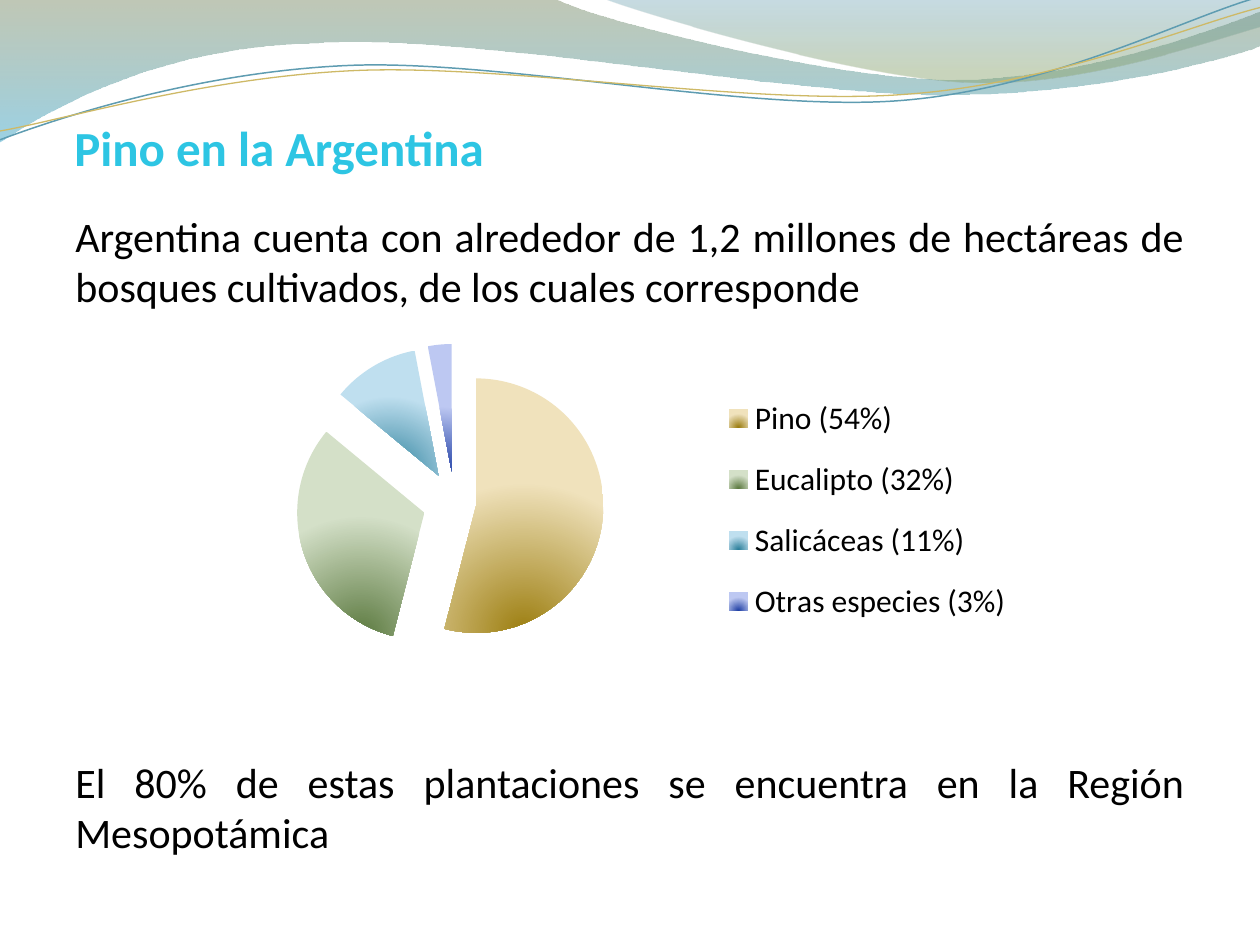
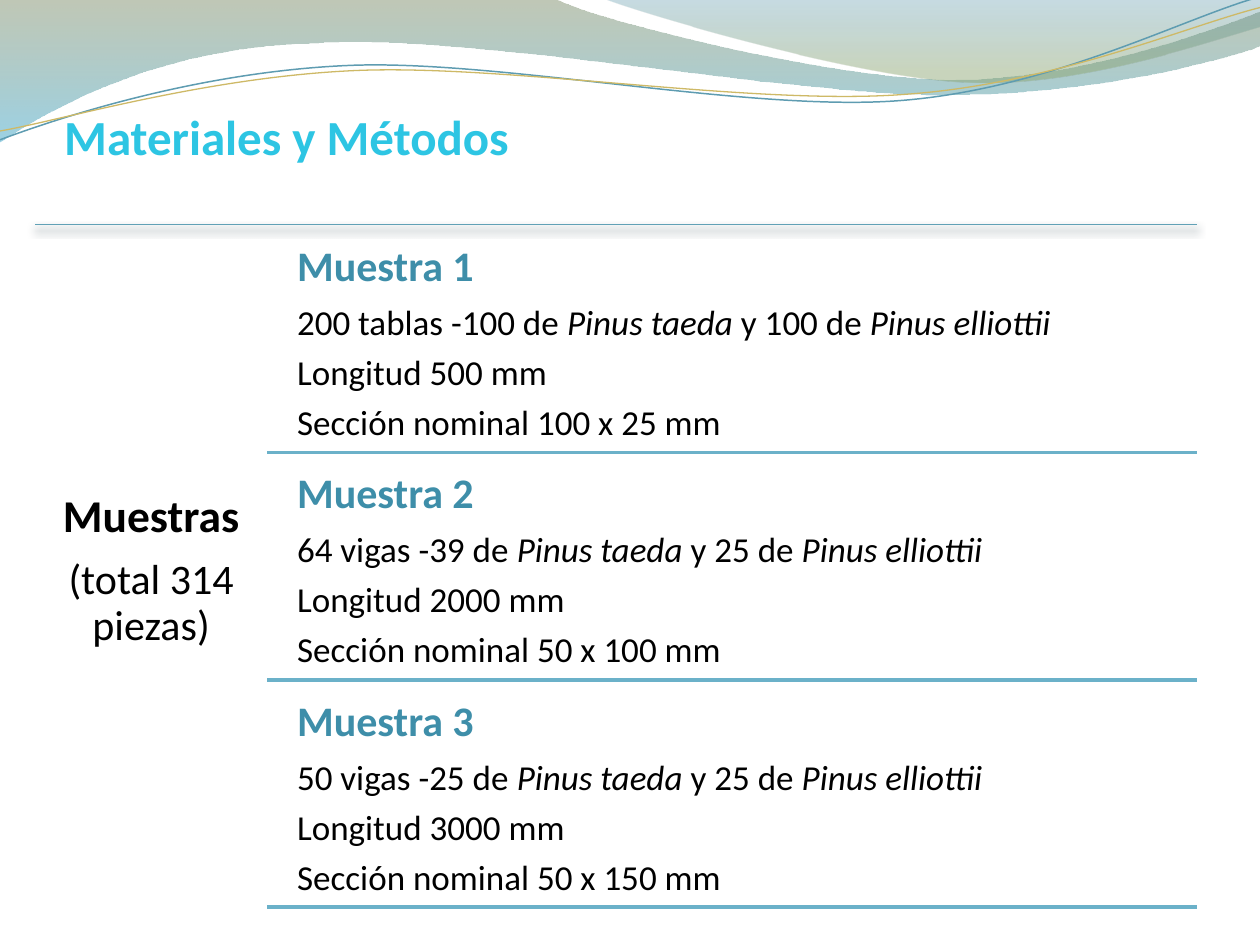
from dataclasses import dataclass
from pptx import Presentation
from pptx.chart.data import CategoryChartData
from pptx.dml.color import RGBColor
from pptx.enum.chart import XL_CHART_TYPE, XL_LEGEND_POSITION
from pptx.enum.shapes import MSO_CONNECTOR
from pptx.enum.text import MSO_ANCHOR, MSO_AUTO_SIZE, PP_ALIGN
from pptx.oxml import parse_xml
from pptx.oxml.ns import nsdecls, qn
from pptx.util import Inches, Pt


@dataclass(frozen=True)
class Theme:
    font: str = "Calibri"
    chart_font: str = "Cambria"
    title: str = "2DC5E3"
    heading: str = "3E8EA9"
    text: str = "000000"
    rule: str = "6BB1C9"
    top_rule: str = "61A1B6"
    shadow: str = "213941"
    title_size: int = 28
    group_size: int = 26
    body_size: int = 24
    detail_size: int = 20
    legend_size: int = 18


T = Theme()

BANDS = [
    {"start": (0, 0),
     "segments": [(4.4, -0.01), (4.76, 0.17, 6.64, 0.63, 7.58, 0.63), (8.53, 0.63, 9.58, 0.26, 10, 0.09),
                  (10.01, 0.36), (9.83, 0.44, 8.7, 0.76, 7.46, 0.75), (6.22, 0.75, 3.82, 0.28, 2.57, 0.34),
                  (1.29, 0.36, 0.46, 0.83, -0.01, 1.13)],
     "stops": [(0, "74855E", 45), (1, "4AACCE", 55)]},
    {"start": (4.79, -0.01),
     "segments": [(5.09, 0.11, 6.82, 0.62, 7.69, 0.65), (8.56, 0.69, 9.61, 0.32, 10, 0.21), (10, 0)],
     "stops": [(0, "45889F", 30), (0.8, "8AA36D", 45)]},
]
WAVES = [
    {"start": (0, 1.11),
     "segments": [(0.48, 0.93, 1.58, 0.57, 2.77, 0.52), (3.95, 0.47, 5.93, 0.89, 7.13, 0.8),
                  (8.33, 0.71, 9.38, 0.15, 9.98, -0.02)],
     "line": ("5E9CB1", 0.85)},
    {"start": (0, 1.04),
     "segments": [(0.47, 0.96, 1.64, 0.61, 2.83, 0.56), (4.03, 0.51, 5.97, 0.84, 7.17, 0.75),
                  (8.36, 0.67, 9.41, 0.21, 10, 0.06)],
     "line": ("CEB966", 0.75)},
]

PINE_TEXTS = [
    "Argentina cuenta con alrededor de 1,2 millones de hectáreas de bosques cultivados, "
    "de los cuales corresponde",
    "El 80% de estas plantaciones se encuentra en la Región Mesopotámica",
]
SPECIES = [
    ("Pino (54%)", 54, "9C7E10", "F0E2BC"),
    ("Eucalipto (32%)", 32, "5C7A40", "D4E0C8"),
    ("Salicáceas (11%)", 11, "2A7F9B", "BFDFEF"),
    ("Otras especies (3%)", 3, "1F3FA5", "BDC8F2"),
]
SAMPLES = [
    ("Muestra 1", "200 tablas -100 de ", "y 100 de ", "Longitud 500 mm", "Sección nominal 100 x 25 mm"),
    ("Muestra 2", "64 vigas -39 de ", "y 25 de ", "Longitud 2000 mm", "Sección nominal 50 x 100 mm"),
    ("Muestra 3", "50 vigas -25 de ", "y 25 de ", "Longitud 3000 mm", "Sección nominal 50 x 150 mm"),
]


def rgb(color):
    return RGBColor.from_string(color)


def add_curve(s, curve, close):
    segments = curve["segments"]
    points = [seg[i:i + 2] for seg in segments for i in range(0, len(seg), 2)]
    first, *rest = [(Inches(x), Inches(y)) for x, y in [curve["start"], *points]]
    builder = s.shapes.build_freeform(*first)
    builder.add_line_segments(rest, close=close)
    sp = builder.convert_to_shape()
    sp.shadow.inherit = False
    steps = iter(sp.element.xpath(".//a:lnTo"))
    for seg in segments:
        step = next(steps)
        if len(seg) == 6:
            bezier = parse_xml(f'<a:cubicBezTo {nsdecls("a")}/>')
            step.addprevious(bezier)
            for part in (step, next(steps), next(steps)):
                bezier.append(part[0])
                part.getparent().remove(part)
    return sp


def add_waves(prs, s):
    curves = []
    for band in BANDS:
        sp = add_curve(s, band, True)
        sp.line.fill.background()
        sp.fill.gradient()
        sp.fill.gradient_angle = 270
        for stop, (pos, color, _) in zip(sp.fill.gradient_stops, band["stops"]):
            stop.position = pos
            stop.color.rgb = rgb(color)
        for clr, (_, _, alpha) in zip(sp.element.xpath(".//a:gs/a:srgbClr"), band["stops"]):
            clr.append(parse_xml(f'<a:alpha {nsdecls("a")} val="{alpha * 1000}"/>'))
        curves.append(sp)
    for wave in WAVES:
        sp = add_curve(s, wave, False)
        sp.fill.background()
        color, width = wave["line"]
        sp.line.color.rgb = rgb(color)
        sp.line.width = Pt(width)
        curves.append(sp)
    for i, sp in enumerate(curves):
        sp.element.nvSpPr.cNvPr.set("id", str(101 + i))
        prs.slide_master.shapes.element.insert(2 + i, sp.element)


def add_run(p, text, size, color=T.text, bold=False, italic=False):
    r = p.add_run()
    r.text = text
    f = r.font
    f.name, f.size, f.bold, f.italic = T.font, Pt(size), bold, italic
    f.color.rgb = rgb(color)


def new_slide(prs, title, box, anchor):
    s = prs.slides.add_slide(prs.slide_layouts[5])
    sp = s.shapes.title
    sp.left, sp.top, sp.width, sp.height = map(Inches, box)
    tf = sp.text_frame
    tf.auto_size = MSO_AUTO_SIZE.NONE
    tf.vertical_anchor = anchor
    tf.margin_left = tf.margin_right = tf.margin_bottom = 0
    tf.margin_top = Inches(0.05 if anchor == MSO_ANCHOR.BOTTOM else 0.01)
    p = tf.paragraphs[0]
    p.alignment = PP_ALIGN.LEFT
    add_run(p, title, T.title_size, T.title, bold=True)
    return s


def add_text(s, box, paragraphs, align, margin=None):
    tf = s.shapes.add_textbox(*map(Inches, box)).text_frame
    tf.word_wrap = True
    if margin:
        tf.vertical_anchor = MSO_ANCHOR.MIDDLE
        tf.margin_left = tf.margin_right = tf.margin_top = tf.margin_bottom = Inches(margin)
    for i, runs in enumerate(paragraphs):
        p = tf.add_paragraph() if i else tf.paragraphs[0]
        p.alignment = align
        if margin:
            p.line_spacing = 0.9
            p.space_after = Pt(round(runs[0][1] * 0.35, 1))
        for run in runs:
            add_run(p, *run)
    return tf


def manual_layout(x, y, w, h, target=""):
    return parse_xml(
        f'<c:layout {nsdecls("c")}><c:manualLayout>{target}<c:xMode val="edge"/><c:yMode val="edge"/>'
        f'<c:x val="{x}"/><c:y val="{y}"/><c:w val="{w}"/><c:h val="{h}"/></c:manualLayout></c:layout>')


def explosion(percent):
    return parse_xml(f'<c:explosion {nsdecls("c")} val="{percent}"/>')


def add_species_chart(s):
    data = CategoryChartData()
    data.categories = [name for name, *_ in SPECIES]
    data.add_series("Series 1", [share for _, share, *_ in SPECIES])
    box = map(Inches, (1.54, 2.73, 6.85, 2.83))
    chart = s.shapes.add_chart(XL_CHART_TYPE.PIE, *box, data).chart
    chart.has_title = False
    chart.font.name, chart.font.size = T.chart_font, Pt(T.legend_size)
    chart.font.color.rgb = rgb(T.text)
    chart.has_legend = True
    legend = chart.legend
    legend.position = XL_LEGEND_POSITION.RIGHT
    legend.include_in_layout = False
    legend.font.name, legend.font.size = T.font, Pt(T.legend_size)
    legend.font.color.rgb = rgb(T.text)

    root = chart.element
    for old in root.xpath(".//c:plotArea/c:layout | .//c:legend/c:layout"):
        old.getparent().remove(old)
    plot_area = root.xpath(".//c:plotArea")[0]
    plot_area.insert(0, manual_layout(0, 0, 0.604, 0.892, '<c:layoutTarget val="inner"/>'))
    root.xpath(".//c:legendPos")[0].addnext(manual_layout(0.59, 0.09, 0.38, 0.75))

    plot = chart.plots[0]
    plot.vary_by_categories = True
    series = plot.series[0]
    for i, (_, _, dark, light) in enumerate(SPECIES):
        fill = series.points[i].format.fill
        fill.gradient()
        for stop, pos, color in zip(fill.gradient_stops, (0, 1), (dark, light)):
            stop.position = pos
            stop.color.rgb = rgb(color)
    for lin in root.xpath(".//c:dPt//a:lin"):
        lin.getparent().replace(lin, parse_xml(
            f'<a:path {nsdecls("a")} path="circle"><a:fillToRect l="50000" t="100000" r="50000" b="0"/></a:path>'))
    root.xpath(".//c:ser")[0].find(qn("c:tx")).addnext(explosion(25))
    root.xpath(".//c:dPt/c:spPr")[0].addprevious(explosion(17))


def add_rule(s, left, y, color, width, effect=""):
    line = s.shapes.add_connector(MSO_CONNECTOR.STRAIGHT, Inches(left), Inches(y), Inches(9.5), Inches(y))
    line.line.color.rgb = rgb(color)
    line.line.width = Pt(width)
    line.element.spPr.append(parse_xml(f'<a:effectLst {nsdecls("a")}>{effect}</a:effectLst>'))


def build_pine_slide(prs):
    s = new_slide(prs, "Pino en la Argentina", (0.59, 0.92, 9, 1.42), MSO_ANCHOR.TOP)
    add_waves(prs, s)
    tf = add_text(s, (0.5, 1.62, 9, 5.59), [[(text, T.body_size)] for text in PINE_TEXTS], PP_ALIGN.JUSTIFY)
    tf.paragraphs[1].space_before = Pt(254.5)
    add_species_chart(s)


def build_samples_slide(prs):
    s = new_slide(prs, "Materiales y Métodos", (0.51, 0.76, 9, 0.55), MSO_ANCHOR.BOTTOM)
    shadow = (f'<a:outerShdw blurRad="{Pt(4.5)}" dist="{Pt(3)}" dir="5400000" rotWithShape="0">'
              f'<a:srgbClr val="{T.shadow}"><a:alpha val="48000"/></a:srgbClr></a:outerShdw>')
    top, pitch, row_height = 1.87, 1.805, 1.72
    add_rule(s, 0.28, 1.78, T.top_rule, 0.75, shadow)
    group = [[("Muestras", T.group_size, T.text, True)], [("(total 314 piezas)", T.body_size)]]
    add_text(s, (0.28, 1.78, 1.84, 5.51), group, PP_ALIGN.CENTER, 0.11)
    size = T.detail_size
    for i, (name, taeda, elliottii, length, section) in enumerate(SAMPLES):
        y = top + i * pitch
        paragraphs = [
            [(name, T.body_size, T.heading, True)],
            [(taeda, size), ("Pinus taeda ", size, T.text, False, True),
             (elliottii, size), ("Pinus elliottii", size, T.text, False, True)],
            [(length, size)],
            [(section, size)],
        ]
        add_text(s, (2.26, y, 7.24, row_height), paragraphs, PP_ALIGN.LEFT, 0.1)
        add_rule(s, 2.12, y + row_height, T.rule, 2)


def main():
    prs = Presentation()
    prs.slide_width, prs.slide_height = Inches(10), Inches(7.5)
    build_pine_slide(prs)
    build_samples_slide(prs)
    prs.save("out.pptx")


if __name__ == "__main__":
    main()
